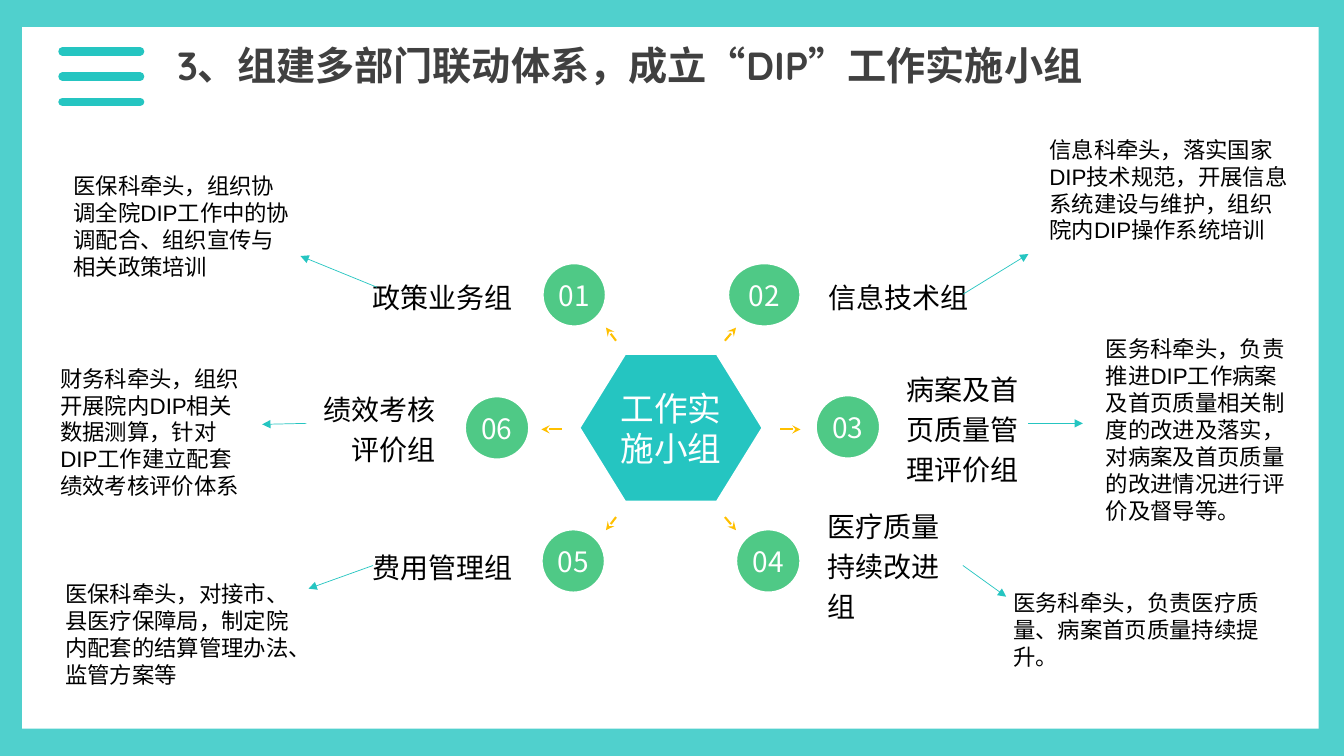
from pptx import Presentation
from pptx.dml.color import RGBColor
from pptx.enum.lang import MSO_LANGUAGE_ID
from pptx.enum.shapes import MSO_CONNECTOR, MSO_SHAPE
from pptx.enum.text import MSO_ANCHOR, MSO_AUTO_SIZE, PP_ALIGN
from pptx.oxml.ns import qn
from pptx.util import Inches, Pt
from lxml import etree

LEFT, CENTER, RIGHT = PP_ALIGN.LEFT, PP_ALIGN.CENTER, PP_ALIGN.RIGHT
TOP, MIDDLE = MSO_ANCHOR.TOP, MSO_ANCHOR.MIDDLE
CHINESE = MSO_LANGUAGE_ID.SIMPLIFIED_CHINESE
RECT, OVAL, HEXAGON = MSO_SHAPE.RECTANGLE, MSO_SHAPE.OVAL, MSO_SHAPE.HEXAGON

COLORS = {"teal": "25C5C1", "green": "4FC986", "gold": "FFC000",
          "title": "404040", "text": "000000", "white": "FFFFFF"}
CJK_FONT, TITLE_FONT, DUTY_FONT = "Noto Sans CJK SC", "Quicksand", "Arial"
WIDTH, HEIGHT = 13.33, 7.5

TITLE = "3、组建多部门联动体系，成立“DIP”工作实施小组"
HUB = "工作实施小组"
GROUPS = [
    {"number": "01", "circle": (5.35, 2.58, 0.69, 0.69),
     "name": "政策业务组", "name_box": (2.46, 2.36, 2.72, 1.11), "align": RIGHT,
     "duty": "医保科牵头，组织协调全院DIP工作中的协调配合、组织宣传与相关政策培训",
     "duty_box": (0.63, 1.66, 2.34, 1.18),
     "spoke": (6.11, 3.38, 6.01, 3.25), "pointer": (3.74, 2.85, 2.98, 2.54)},
    {"number": "02", "circle": (7.19, 2.58, 0.78, 0.69),
     "name": "信息技术组", "name_box": (8.12, 2.36, 2.94, 1.11), "align": LEFT,
     "duty": "信息科牵头，落实国家DIP技术规范，开展信息系统建设与维护，组织院内DIP操作系统培训",
     "duty_box": (10.31, 1.3, 2.6, 1.18),
     "spoke": (7.19, 3.38, 7.3, 3.25), "pointer": (9.55, 2.92, 10.2, 2.52)},
    {"number": "03", "circle": (8.06, 3.89, 0.7, 0.69),
     "name": "病案及首页质量管理评价组", "name_box": (8.89, 3.7, 1.39, 1.05), "align": LEFT,
     "duty": "医务科牵头，负责推进DIP工作病案及首页质量相关制度的改进及落实，"
             "对病案及首页质量的改进情况进行评价及督导等。",
     "duty_box": (10.87, 3.28, 2.04, 1.99),
     "spoke": (7.74, 4.26, 7.94, 4.26), "pointer": (10.2, 4.2, 10.74, 4.2)},
    {"number": "04", "circle": (7.27, 5.22, 0.7, 0.69),
     "name": "医疗质量持续改进组", "name_box": (8.11, 4.83, 1.42, 1.51), "align": LEFT,
     "duty": "医务科牵头，负责医疗质量、病案首页质量持续提升。",
     "duty_box": (9.95, 5.8, 2.79, 0.91),
     "spoke": (7.19, 5.13, 7.3, 5.26), "pointer": (9.55, 5.61, 9.98, 5.92)},
    {"number": "05", "circle": (5.34, 5.22, 0.69, 0.69),
     "name": "费用管理组", "name_box": (2.46, 5.13, 2.72, 0.92), "align": RIGHT,
     "duty": "医保科牵头，对接市、县医疗保障局，制定院内配套的结算管理办法、监管方案等",
     "duty_box": (0.55, 5.71, 2.44, 1.18),
     "spoke": (6.11, 5.13, 6.01, 5.26), "pointer": (3.7, 5.61, 3.06, 5.84)},
    {"number": "06", "circle": (4.58, 3.9, 0.7, 0.69),
     "name": "绩效考核评价组", "name_box": (3.06, 3.7, 1.36, 1.05), "align": RIGHT,
     "duty": "财务科牵头，组织开展院内DIP相关数据测算，针对DIP工作建立配套绩效考核评价体系",
     "duty_box": (0.5, 3.57, 2.1, 1.45),
     "spoke": (5.57, 4.26, 5.37, 4.26), "pointer": (3.04, 4.2, 2.6, 4.21)},
]


def rgb(color):
    return RGBColor.from_string(COLORS[color])


def write(frame, text, size, font, color, align=LEFT, anchor=TOP,
          spacing=1.0, inset=(0.1, 0.05), bold=False):
    frame.word_wrap = True
    frame.auto_size = MSO_AUTO_SIZE.NONE
    frame.vertical_anchor = anchor
    frame.margin_left = frame.margin_right = Inches(inset[0])
    frame.margin_top = frame.margin_bottom = Inches(inset[1])
    paragraph = frame.paragraphs[0]
    paragraph.alignment = align
    paragraph.line_spacing = spacing
    paragraph.space_before = Pt(0)
    run = paragraph.add_run()
    run.text = text
    run.font.size = Pt(size)
    run.font.bold = bold
    run.font.color.rgb = rgb(color)
    run.font.language_id = CHINESE
    run.font.name = font
    latin = run.font._element.find(qn("a:latin"))
    east_asian = etree.Element(qn("a:ea"), typeface=CJK_FONT)
    latin.addnext(east_asian)


def add_text(slide, box, *args, **kwargs):
    textbox = slide.shapes.add_textbox(*map(Inches, box))
    write(textbox.text_frame, *args, **kwargs)


def add_filled(slide, preset, box, color, outlined=False):
    shape = slide.shapes.add_shape(preset, *map(Inches, box))
    shape.shadow.inherit = False
    shape.fill.solid()
    shape.fill.fore_color.rgb = rgb(color)
    if outlined:
        shape.line.color.rgb = rgb("white")
        shape.line.width = Pt(6)
    else:
        shape.line.fill.background()
    return shape


def add_line(slide, ends, color, width, arrow=None, cap="flat"):
    line = slide.shapes.add_connector(MSO_CONNECTOR.STRAIGHT, *map(Inches, ends))
    line.line.color.rgb = rgb(color)
    line.line.width = Pt(width)
    outline = line.line._get_or_add_ln()
    outline.set("cap", cap)
    if arrow:
        etree.SubElement(outline, qn("a:tailEnd"), type=arrow)
    etree.SubElement(line._element.spPr, qn("a:effectLst"))


def add_frame(slide):
    for top in (0, HEIGHT / 2):
        band = add_filled(slide, RECT, (0, top, WIDTH, HEIGHT / 2), "teal")
        tint = band._element.spPr.find(qn("a:solidFill"))[0]
        etree.SubElement(tint, qn("a:alpha"), val="80000")
    add_filled(slide, RECT, (0.22, 0.27, 12.86, 6.96), "white")


def add_heading(slide):
    title = slide.shapes.title
    title.left, title.top, title.width, title.height = map(Inches, (1.66, 0.36, 10.04, 0.57))
    write(title.text_frame, TITLE, 28, TITLE_FONT, "title", bold=True)
    slide.shapes._spTree.append(title._element)
    for row in range(3):
        y = 0.51 + row * 0.25
        add_line(slide, (0.62, y, 1.39, y), "teal", 6, cap="rnd")


def add_group(slide, group):
    add_line(slide, group["spoke"], "gold", 1.5, "stealth")
    circle = add_filled(slide, OVAL, group["circle"], "green", outlined=True)
    write(circle.text_frame, group["number"], 20, CJK_FONT, "white",
          CENTER, MIDDLE, inset=(0, 0))
    add_text(slide, group["name_box"], group["name"], 20, CJK_FONT, "text",
             group["align"], MIDDLE, spacing=1.2)
    add_line(slide, group["pointer"], "teal", 0.5, "triangle")
    add_text(slide, group["duty_box"], group["duty"], 16, DUTY_FONT, "text")


def main():
    prs = Presentation()
    prs.slide_width, prs.slide_height = Inches(WIDTH), Inches(HEIGHT)
    slide = prs.slides.add_slide(prs.slide_layouts[5])
    add_frame(slide)
    add_heading(slide)
    hub = add_filled(slide, HEXAGON, (5.71, 3.48, 1.89, 1.53), "teal", outlined=True)
    hub.adjustments[0] = 0.309
    write(hub.text_frame, HUB, 24, CJK_FONT, "white", CENTER, MIDDLE, inset=(0, 0))
    for group in GROUPS:
        add_group(slide, group)
    prs.save("out.pptx")


if __name__ == "__main__":
    main()
